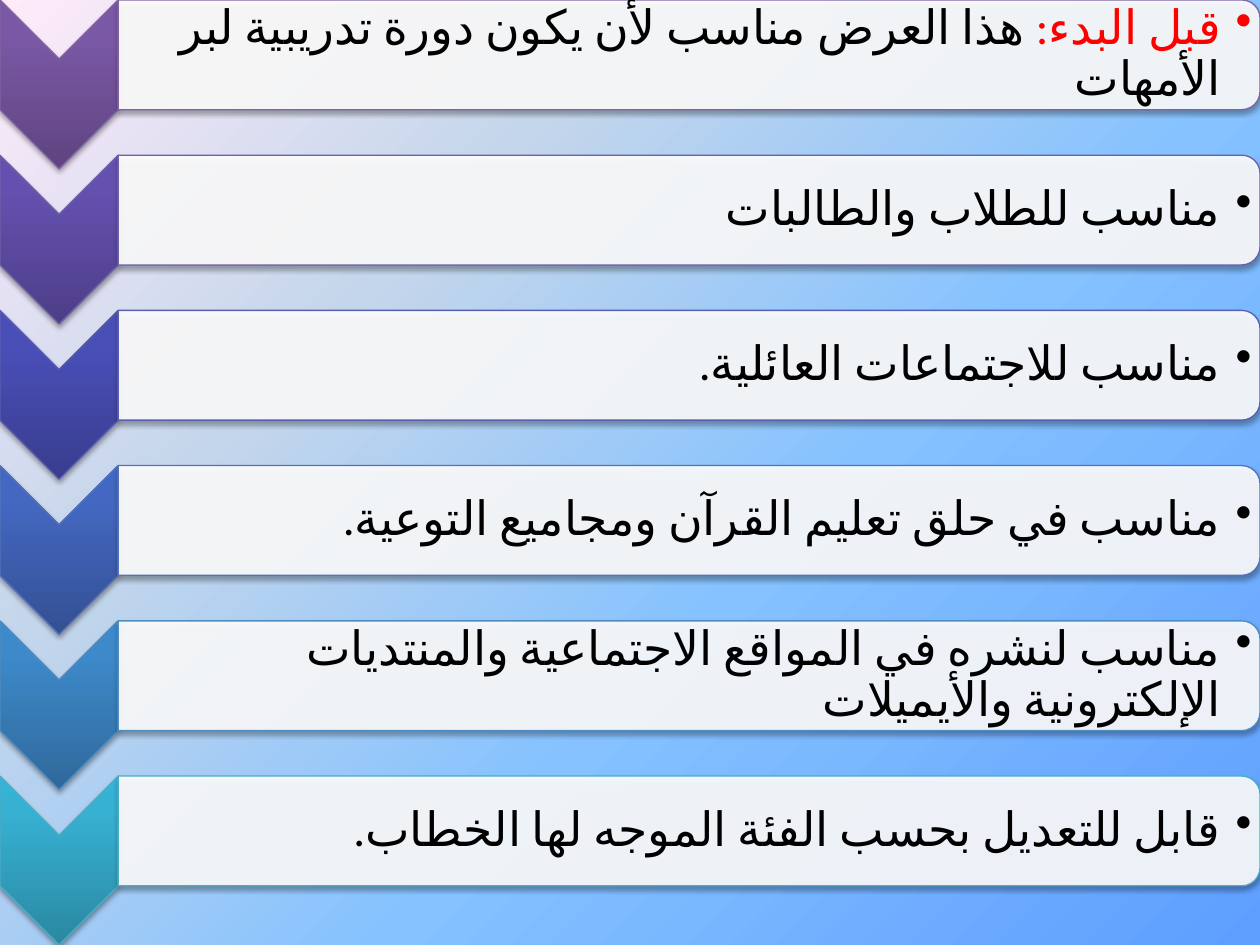
from lxml import etree
from pptx import Presentation
from pptx.dml.color import RGBColor
from pptx.enum import shapes, text
from pptx.oxml import parse_xml
from pptx.oxml.ns import nsdecls, qn
from pptx.util import Pt

BLACK = RGBColor(0x00, 0x00, 0x00)
RED = RGBColor(0xFF, 0x00, 0x00)
WHITE = RGBColor(0xFF, 0xFF, 0xFF)
BACKGROUND = [
    (0, RGBColor(0x5E, 0x9E, 0xFF)),
    (40, RGBColor(0x85, 0xC2, 0xFF)),
    (70, RGBColor(0xC4, 0xD6, 0xEB)),
    (100, RGBColor(0xFF, 0xEB, 0xFA)),
]
CORNER = '<a:path path="circle"><a:fillToRect l="100000" t="100000"/></a:path>'
UPWARD = '<a:lin ang="16200000" scaled="0"/>'

# Line colour, the three chevron gradient colours, and the coloured text runs
ITEMS = [
    ("8064A2", ("5F4480", "7B58A6", "7C57A8"),
     [("قبل البدء: ", RED),
      ("هذا العرض مناسب لأن يكون دورة تدريبية لبر الأمهات", BLACK)]),
    ("6E5FA9", ("4D3E87", "6451AF", "6450B2"),
     [("مناسب للطلاب والطالبات", BLACK)]),
    ("5A5EB1", ("393D8E", "4A4FB8", "484EBB"),
     [("مناسب للاجتماعات العائلية.", BLACK)]),
    ("5572B8", ("345094", "4468C1", "4168C4"),
     [("مناسب في حلق تعليم القرآن ومجاميع التوعية.", BLACK)]),
    ("508CBF", ("2F699B", "3D89C9", "3B8ACD"),
     [("مناسب لنشره في المواقع الاجتماعية والمنتديات الإلكترونية والأيميلات", BLACK)]),
    ("4BACC6", ("2A88A2", "37B1D2", "34B4D6"),
     [("قابل للتعديل بحسب الفئة الموجه لها الخطاب.", BLACK)]),
]
STEP = 88.7
CHEVRON_W, CHEVRON_H = 67.5, 96.5
BAR_W, BAR_H = 652.5, 62.7


def set_gradient(parent, stops, direction):
    """Replace the solid fill in parent by a gradient."""
    stop_xml = "".join(
        f'<a:gs pos="{pos * 1000}"><a:srgbClr val="{color}"/></a:gs>'
        for pos, color in stops)
    gradient = parse_xml(
        f'<a:gradFill {nsdecls("a")} rotWithShape="0">'
        f'<a:gsLst>{stop_xml}</a:gsLst>{direction}</a:gradFill>')
    parent.replace(parent.find(qn("a:solidFill")), gradient)


def add_run(p, content, size=27, font="Calibri", color=BLACK):
    r = p.add_run()
    r.text = content
    r.font.size = Pt(size)
    r.font.name = font
    r.font.color.rgb = color
    r.font._element.set("lang", "ar-SA")
    etree.SubElement(r.font._element, qn("a:cs"), typeface=font)


prs = Presentation()
prs.slide_width, prs.slide_height = Pt(720), Pt(540)
s = prs.slides.add_slide(prs.slide_layouts[6])
s.background.fill.solid()
set_gradient(s.background._cSld.bg.bgPr, BACKGROUND, CORNER)

for i, (line, gradient, runs) in enumerate(ITEMS):
    top = i * STEP

    # Both shapes are turned a quarter, so width and height are swapped
    for kind, left, w, h in [
        (shapes.MSO_SHAPE.CHEVRON, 0, CHEVRON_W, CHEVRON_H),
        (shapes.MSO_SHAPE.ROUND_2_SAME_RECTANGLE, CHEVRON_W, BAR_W, BAR_H),
    ]:
        sp = s.shapes.add_shape(kind, Pt(left + (w - h) / 2),
                                Pt(top + (h - w) / 2), Pt(h), Pt(w))
        sp.rotation = 90
        sp.fill.solid()
        sp.fill.fore_color.rgb = WHITE
        sp.line.color.rgb = RGBColor.from_string(line)
        sp.line.width = Pt(0.75)
        sp.shadow.inherit = False
        spPr = sp._element.spPr
        spPr.find(qn("a:effectLst")).append(parse_xml(
            f'<a:outerShdw {nsdecls("a")} blurRad="{Pt(3.1)}" dist="{Pt(1.8)}" '
            'dir="5400000" rotWithShape="0"><a:srgbClr val="000000">'
            '<a:alpha val="35000"/></a:srgbClr></a:outerShdw>'))
        if kind == shapes.MSO_SHAPE.CHEVRON:
            set_gradient(spPr, zip((0, 80, 100), gradient), UPWARD)
        else:
            etree.SubElement(spPr.find(qn("a:solidFill"))[0],
                             qn("a:alpha"), val="90000")

    box = s.shapes.add_textbox(Pt(CHEVRON_W), Pt(top + 3.1), Pt(649.5), Pt(56.5))
    tf = box.text_frame
    tf.word_wrap = True
    tf.vertical_anchor = text.MSO_ANCHOR.MIDDLE
    tf.margin_left = Pt(15)
    tf.margin_top = tf.margin_right = tf.margin_bottom = Pt(1.4)
    p = tf.paragraphs[0]
    p.level = 1
    p.alignment = text.PP_ALIGN.RIGHT
    p.line_spacing = 0.9
    pPr = p._p.get_or_add_pPr()
    pPr.set("rtl", "1")
    pPr.set("marL", str(Pt(18)))
    pPr.set("indent", str(Pt(-18)))
    etree.SubElement(pPr, qn("a:buChar"), char="•")
    for content, color in runs:
        add_run(p, content, color=color)

prs.save("out.pptx")
